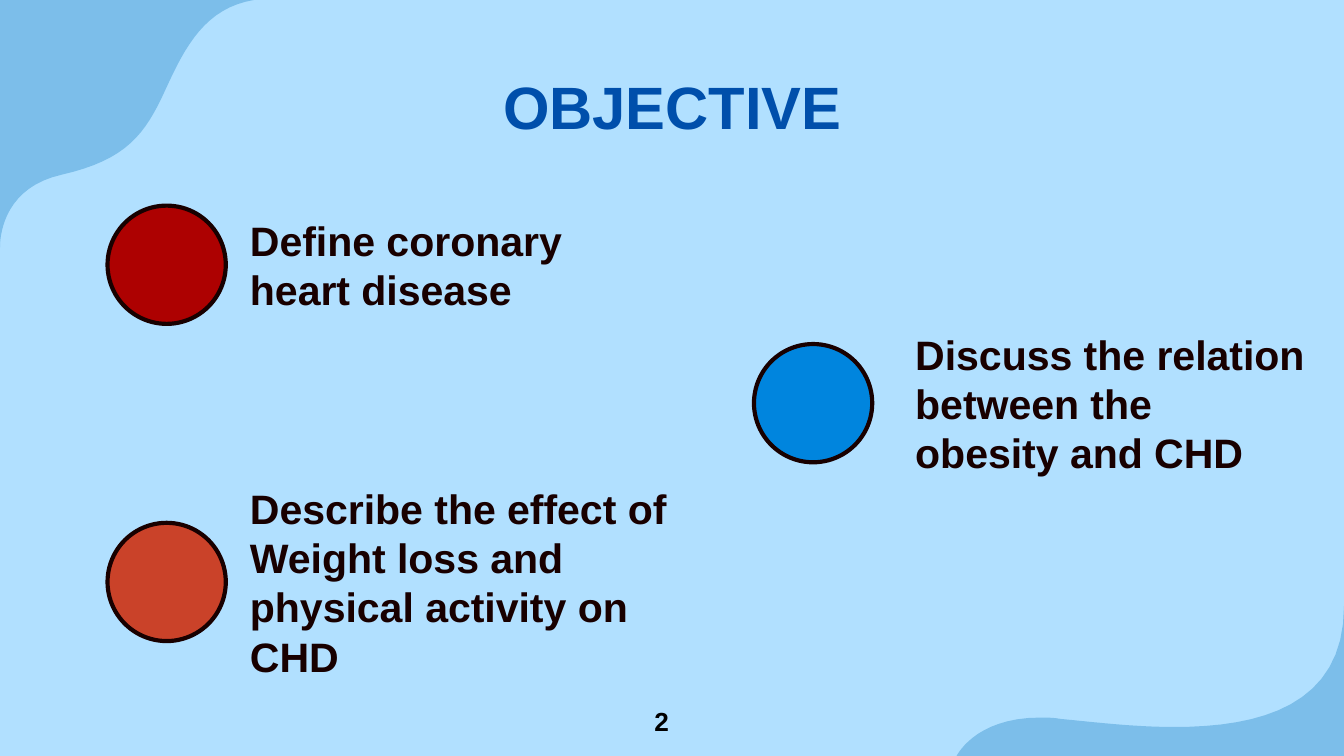
import pptx
import pptx.util
import pptx.dml.color
import pptx.enum.shapes
import pptx.enum.text
import pptx.oxml.ns
import lxml.etree

COLORS = {"sky": "B1E0FF", "wave": "7CBEEA", "title": "004FAB", "ink": "180000",
          "red": "AD0101", "blue": "0085DE", "rust": "CA4229", "page": "000000"}
FONT = "Arial"
WIDE = 10
HIGH = WIDE * 9 / 16
TITLE = "OBJECTIVE"
PAGE = "2"

# text, colour, circle left and top, text left and width
GOALS = [
    ("Define coronary heart disease", "red", 0.8, 1.53, 1.76, 3.11),
    ("Discuss the relation between the obesity and CHD", "blue", 5.61, 2.56, 6.71, 3.11),
    ("Describe the effect of Weight loss and physical activity on CHD", "rust",
     0.8, 3.89, 1.76, 3.63),
]
DOT, ROW = 0.88, 0.41

# A step of one point is a straight line, one of three points a Bezier curve
CORNERS = [
    ((0, 0), [[(0, 1.84)],
              [(0, 1.72), (0.05, 1.39), (0.46, 1.3)],
              [(0.94, 1.19), (1.08, 1), (1.23, 0.67)],
              [(1.38, 0.34), (1.53, 0.06), (1.89, 0)]]),
    ((10, 4.51), [[(10, 5.26), (9.36, 5.41), (8.74, 5.41)],
                  [(8.42, 5.41), (8.11, 5.37), (7.89, 5.35)],
                  [(7.84, 5.34), (7.79, 5.34), (7.74, 5.34)],
                  [(7.24, 5.34), (7.11, 5.64), (7.11, 5.64)],
                  [(10, 5.64)]]),
]
STEPS = 16

inch = pptx.util.Inches
anchors = pptx.enum.text.MSO_ANCHOR


def rgb(name):
    return pptx.dml.color.RGBColor.from_string(COLORS[name])


def trace(start, steps):
    """Return the outline's points, with each curve cut into short lines."""
    points, last = [], start
    for step in steps:
        if len(step) == 1:
            points += step
        else:
            ends = [last, *step]
            for i in range(1, STEPS + 1):
                t = i / STEPS
                parts = ((1 - t) ** 3, 3 * t * (1 - t) ** 2, 3 * t * t * (1 - t), t ** 3)
                points.append(tuple(sum(p * e[k] for p, e in zip(parts, ends))
                                    for k in (0, 1)))
        last = step[-1]
    return points


def place(shape, left, top, width, height):
    shape.left, shape.top = inch(left), inch(top)
    shape.width, shape.height = inch(width), inch(height)


def write(shape, text, size, color, anchor, pad=0.1):
    frame = shape.text_frame
    frame.text = text
    frame.word_wrap = True
    frame.auto_size = pptx.enum.text.MSO_AUTO_SIZE.NONE
    frame.vertical_anchor = anchor
    frame.margin_left = frame.margin_right = inch(0.1)
    frame.margin_top = frame.margin_bottom = inch(pad)
    para = frame.paragraphs[0]
    para.space_before = pptx.util.Pt(0)
    font = para.runs[0].font
    font.name, font.size, font.bold = FONT, pptx.util.Pt(size), True
    font.color.rgb = rgb(color)
    return para


def unlist(para):
    """Take away the bullet and its indent."""
    props = para._p.get_or_add_pPr()
    props.set("marL", "0")
    props.set("indent", "0")
    lxml.etree.SubElement(props, pptx.oxml.ns.qn("a:buNone"))


def main():
    deck = pptx.Presentation()
    deck.slide_width, deck.slide_height = inch(WIDE), inch(HIGH)
    slide = deck.slides.add_slide(deck.slide_layouts.get_by_name("Comparison"))
    slide.background.fill.solid()
    slide.background.fill.fore_color.rgb = rgb("sky")
    shapes = slide.shapes

    for start, steps in CORNERS:
        pen = shapes.build_freeform(inch(start[0]), inch(start[1]))
        pen.add_line_segments([(inch(x), inch(y)) for x, y in trace(start, steps)])
        wave = pen.convert_to_shape()
        wave.shadow.inherit = False
        wave.fill.solid()
        wave.fill.fore_color.rgb = rgb("wave")
        wave.line.fill.background()

    place(shapes.title, 0.79, 0.42, 8.43, 0.65)
    para = write(shapes.title, TITLE, 32, "title", anchors.TOP)
    para.alignment = pptx.enum.text.PP_ALIGN.CENTER

    bodies = [b for b in slide.placeholders if b.placeholder_format.idx > 0]
    for body, (text, color, x, y, left, width) in zip(bodies, GOALS):
        dot = shapes.add_shape(pptx.enum.shapes.MSO_SHAPE.OVAL,
                               inch(x), inch(y), inch(DOT), inch(DOT))
        dot.shadow.inherit = False
        dot.fill.solid()
        dot.fill.fore_color.rgb = rgb(color)
        dot.line.color.rgb = rgb("ink")
        dot.line.width = pptx.util.Pt(2.25)
        place(body, left, y + (DOT - ROW) / 2, width, ROW)
        para = write(body, text, 22, "ink", anchors.MIDDLE)
        para.line_spacing = 1.0
        unlist(para)
    for body in bodies[len(GOALS):]:
        body._element.getparent().remove(body._element)

    page = shapes.add_textbox(inch(4.77), inch(5.2), inch(0.47), inch(0.34))
    write(page, PAGE, 14, "page", anchors.TOP, 0.05)
    deck.save("out.pptx")


if __name__ == "__main__":
    main()
